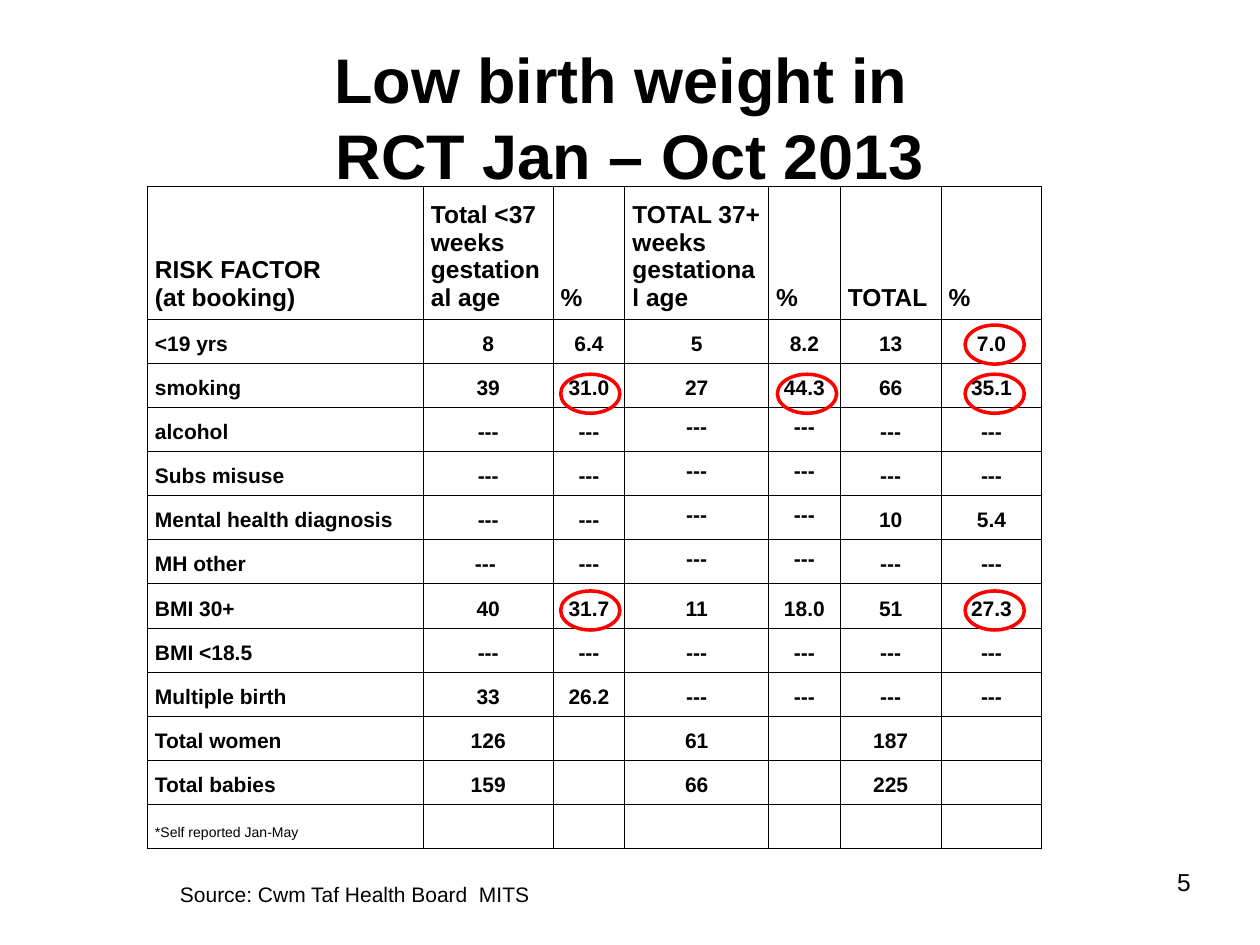
import lxml.etree
import pptx
import pptx.dml.color
import pptx.enum.shapes
import pptx.enum.text
import pptx.oxml.ns
import pptx.util

Inches = pptx.util.Inches
Pt = pptx.util.Pt
Align = pptx.enum.text.PP_ALIGN
Anchor = pptx.enum.text.MSO_ANCHOR

BLACK = "000000"
RED = "FF0000"

COLUMN_WIDTHS = [2.19, 1.03, 0.57, 1.14, 0.57, 0.8, 0.8]
HEADER_HEIGHT = 0.98
ROW_HEIGHT = 0.35
NO_DATA = "---"
TABLE_ROWS = [
    ["RISK FACTOR\n(at booking)", "Total <37 weeks gestational age", "%",
     "TOTAL 37+ weeks gestational age", "%", "TOTAL", "%"],
    ["<19 yrs", "8", "6.4", "5", "8.2", "13", "7.0"],
    ["smoking", "39", "31.0", "27", "44.3", "66", "35.1"],
    ["alcohol"] + [NO_DATA] * 6,
    ["Subs misuse"] + [NO_DATA] * 6,
    ["Mental health diagnosis"] + [NO_DATA] * 4 + ["10", "5.4"],
    ["MH other", NO_DATA + " "] + [NO_DATA] * 5,
    ["BMI 30+", "40", "31.7", "11", "18.0", "51", "27.3"],
    ["BMI <18.5"] + [NO_DATA] * 6,
    ["Multiple birth", "33", "26.2"] + [NO_DATA] * 4,
    ["Total women", "126", "", "61", "", "187", ""],
    ["Total babies", "159", "", "66", "", "225", ""],
    ["*Self reported Jan-May"] + [""] * 6,
]
# Cells whose text sits at the top: the 37+ weeks pair, alcohol to MH other
TOP_ROWS = range(3, 7)
TOP_COLUMNS = (3, 4)

# Left and top of each highlight ring
RINGS = [(4.45, 2.97), (6.17, 2.97), (7.66, 2.97),
         (4.45, 4.69), (7.66, 4.69), (7.66, 2.58)]


def color(hex_string):
    return pptx.dml.color.RGBColor.from_string(hex_string)


def write_text(text_frame, text, size, bold=False, align=Align.LEFT):
    text_frame.text = text
    for paragraph in text_frame.paragraphs:
        paragraph.alignment = align
        for run in paragraph.runs:
            run.font.name = "Arial"
            run.font.size = Pt(size)
            run.font.bold = bold
            run.font.color.rgb = color(BLACK)


def set_margins(holder, margin):
    holder.margin_left = holder.margin_right = Inches(margin)
    holder.margin_top = holder.margin_bottom = Inches(margin)


def add_title(slide, text):
    title = slide.shapes.title
    title.left, title.top = Inches(0.5), Inches(0.1)
    title.width, title.height = Inches(9), Inches(1.65)
    text_frame = title.text_frame
    set_margins(text_frame, 0.05)
    text_frame.word_wrap = True
    text_frame.auto_size = pptx.enum.text.MSO_AUTO_SIZE.NONE
    text_frame.vertical_anchor = Anchor.MIDDLE
    write_text(text_frame, text, 36, bold=True, align=Align.CENTER)


def add_label(slide, text, left, top, width, height, size, align=Align.LEFT, margin=None):
    box = slide.shapes.add_textbox(Inches(left), Inches(top), Inches(width), Inches(height))
    box.text_frame.word_wrap = True
    if margin is not None:
        set_margins(box.text_frame, margin)
    write_text(box.text_frame, text, size, align=align)


def add_borders(cell):
    properties = cell._tc.get_or_add_tcPr()
    for position, side in enumerate(("lnL", "lnR", "lnT", "lnB")):
        line = lxml.etree.Element(pptx.oxml.ns.qn("a:" + side), w=str(Pt(0.5)))
        fill = lxml.etree.SubElement(line, pptx.oxml.ns.qn("a:solidFill"))
        lxml.etree.SubElement(fill, pptx.oxml.ns.qn("a:srgbClr"), val=BLACK)
        properties.insert(position, line)


def format_cell(cell, text, row, column):
    cell.fill.background()
    add_borders(cell)
    set_margins(cell, 0.06)
    is_top = row in TOP_ROWS and column in TOP_COLUMNS
    cell.vertical_anchor = Anchor.TOP if is_top else Anchor.BOTTOM
    if not text:
        # Keep empty cells from stretching the row
        paragraph = cell.text_frame.paragraphs[0]
        lxml.etree.SubElement(paragraph._p, pptx.oxml.ns.qn("a:endParaRPr"), sz="1200")
        return
    is_header, is_footnote = row == 0, row == len(TABLE_ROWS) - 1
    size = 14 if is_header else 8 if is_footnote else 12
    align = Align.LEFT if is_header or column == 0 else Align.CENTER
    write_text(cell.text_frame, text, size, bold=not is_footnote, align=align)


def add_risk_table(slide):
    height = HEADER_HEIGHT + ROW_HEIGHT * (len(TABLE_ROWS) - 1)
    frame = slide.shapes.add_table(
        len(TABLE_ROWS), len(COLUMN_WIDTHS), Inches(1.17), Inches(1.48),
        Inches(sum(COLUMN_WIDTHS)), Inches(height))
    table = frame.table
    table.first_row = table.horz_banding = False
    for column, width in zip(table.columns, COLUMN_WIDTHS):
        column.width = Inches(width)
    for row_index, texts in enumerate(TABLE_ROWS):
        table.rows[row_index].height = Inches(ROW_HEIGHT if row_index else HEADER_HEIGHT)
        for column_index, text in enumerate(texts):
            format_cell(table.cell(row_index, column_index), text, row_index, column_index)


def add_ring(slide, left, top):
    ring = slide.shapes.add_shape(
        pptx.enum.shapes.MSO_SHAPE.OVAL,
        Inches(left), Inches(top), Inches(0.47), Inches(0.31))
    ring.shadow.inherit = False
    ring.fill.background()
    ring.line.color.rgb = color(RED)
    ring.line.width = Pt(2)


def main():
    presentation = pptx.Presentation()
    presentation.slide_width, presentation.slide_height = Inches(10), Inches(7.5)
    slide = presentation.slides.add_slide(presentation.slide_layouts[5])

    # Page number and title
    add_label(slide, "5", 7.17, 6.83, 2.33, 0.31, 14, align=Align.RIGHT, margin=0.05)
    add_title(slide, "Low birth weight in \vRCT Jan – Oct 2013")

    # Risk factors with the notable percentages ringed
    add_risk_table(slide)
    for left, top in RINGS:
        add_ring(slide, left, top)

    # Source line
    add_label(slide, "Source: Cwm Taf Health Board  MITS", 1.33, 6.95, 4.92, 0.3, 12)

    presentation.save("out.pptx")


if __name__ == "__main__":
    main()
